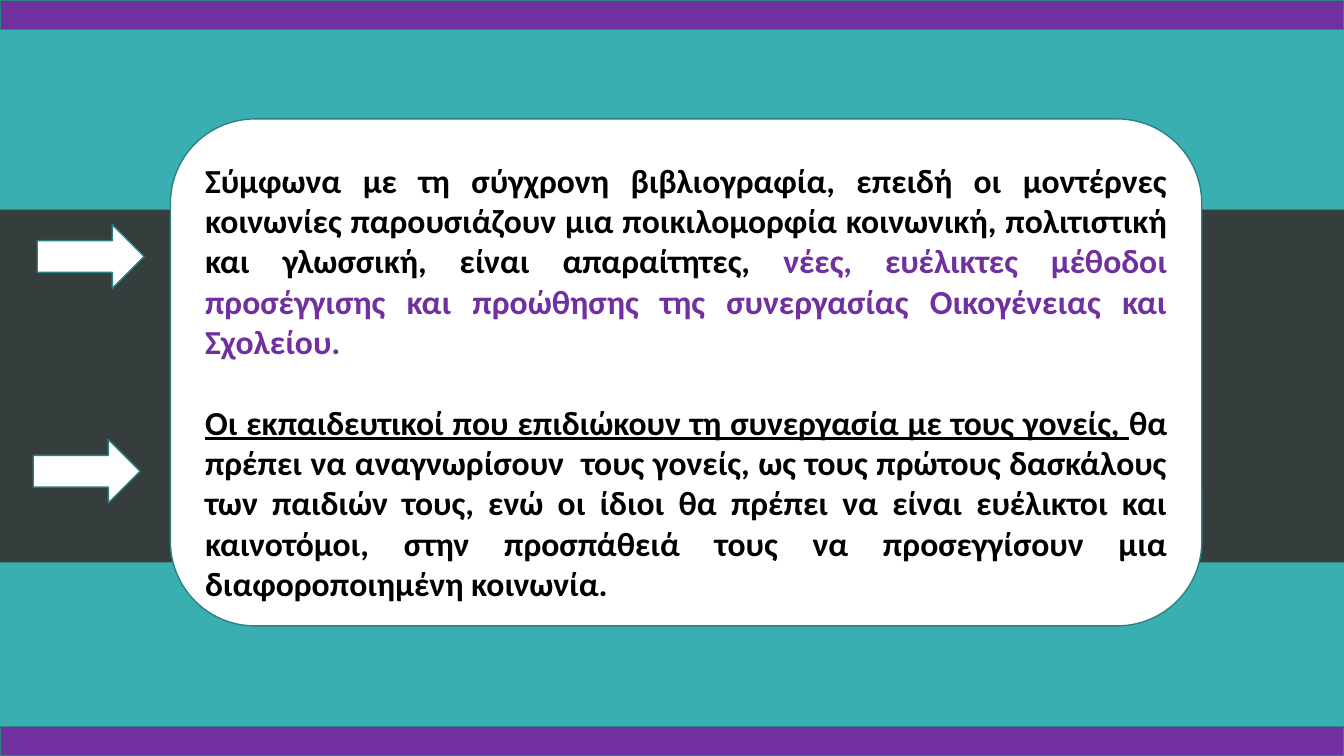
import dataclasses
import typing

import pptx
import pptx.dml.color
import pptx.enum.shapes
import pptx.enum.text
import pptx.slide
import pptx.util

Inches = pptx.util.Inches
Pt = pptx.util.Pt
MSO_SHAPE = pptx.enum.shapes.MSO_SHAPE

COLORS = {
    "dark": "363D3D",
    "teal": "3AAFB2",
    "outline": "2B8184",
    "purple": "7030A0",
    "white": "FFFFFF",
    "black": "000000",
}
SLIDE_W, SLIDE_H = 13.33, 7.5
STRIPE_H = 0.29
ARROW_W, ARROW_H = 1.06, 0.63
LINE_PITCH = 28.8


@dataclasses.dataclass
class Block:
    left: float
    top: float
    width: float
    height: float
    fill: str
    kind: MSO_SHAPE = MSO_SHAPE.RECTANGLE
    outlined: bool = True


@dataclasses.dataclass
class Phrase:
    text: str
    color: str = "black"
    underline: bool = False


BANDS = [
    Block(0, 0, SLIDE_W, 2.08, "teal", outlined=False),
    Block(0, 5.58, SLIDE_W, 1.92, "teal", outlined=False),
]
CARD = Block(1.69, 1.18, 10.23, 5.03, "white", MSO_SHAPE.ROUNDED_RECTANGLE)
ARROWS = [
    Block(left, top, ARROW_W, ARROW_H, "white", MSO_SHAPE.RIGHT_ARROW)
    for left, top in ((0.37, 2.23), (0.33, 4.36))
]
STRIPES = [
    Block(0, top, SLIDE_W, STRIPE_H, "purple") for top in (0, SLIDE_H - STRIPE_H)
]
PARAGRAPHS = [
    [
        Phrase("Σύμφωνα με τη σύγχρονη βιβλιογραφία, επειδή οι μοντέρνες κοινωνίες "
               "παρουσιάζουν μια ποικιλομορφία κοινωνική, πολιτιστική και γλωσσική, "
               "είναι απαραίτητες, "),
        Phrase("νέες, ευέλικτες μέθοδοι προσέγγισης και προώθησης της συνεργασίας "
               "Οικογένειας και Σχολείου.", color="purple"),
    ],
    [
        Phrase("Οι εκπαιδευτικοί που επιδιώκουν τη συνεργασία με τους γονείς, ",
               underline=True),
        Phrase("θα πρέπει να αναγνωρίσουν  τους γονείς, ως τους πρώτους δασκάλους "
               "των παιδιών τους, ενώ οι ίδιοι θα πρέπει να είναι ευέλικτοι και "
               "καινοτόμοι, στην προσπάθειά τους να προσεγγίσουν μια "
               "διαφοροποιημένη κοινωνία."),
    ],
]


def rgb(name: str) -> pptx.dml.color.RGBColor:
    return pptx.dml.color.RGBColor.from_string(COLORS[name])


def add_block(s: pptx.slide.Slide, block: Block) -> typing.Any:
    sp = s.shapes.add_shape(
        block.kind, Inches(block.left), Inches(block.top),
        Inches(block.width), Inches(block.height))
    sp.shadow.inherit = False
    sp.fill.solid()
    sp.fill.fore_color.rgb = rgb(block.fill)
    if block.outlined:
        sp.line.color.rgb = rgb("outline")
        sp.line.width = Pt(1)
    else:
        sp.line.fill.background()
    return sp


def write_paragraphs(sp: typing.Any, paragraphs: list[list[Phrase]]) -> None:
    tf = sp.text_frame
    tf.word_wrap = True
    tf.vertical_anchor = pptx.enum.text.MSO_ANCHOR.TOP
    tf.margin_top = Inches(0.16)
    for i, phrases in enumerate(paragraphs):
        p = tf.add_paragraph() if i else tf.paragraphs[0]
        p.alignment = pptx.enum.text.PP_ALIGN.JUSTIFY
        p.line_spacing = Pt(LINE_PITCH)
        p.space_before = Pt(LINE_PITCH if i else 0)
        for phrase in phrases:
            r = p.add_run()
            r.text = phrase.text
            r.font.name = "Calibri"
            r.font.size = Pt(24)
            r.font.bold = True
            r.font.underline = phrase.underline
            r.font.color.rgb = rgb(phrase.color)


def main() -> None:
    prs = pptx.Presentation()
    prs.slide_width, prs.slide_height = Inches(SLIDE_W), Inches(SLIDE_H)
    s = prs.slides.add_slide(prs.slide_layouts[6])
    s.background.fill.solid()
    s.background.fill.fore_color.rgb = rgb("dark")
    for band in BANDS:
        add_block(s, band)
    write_paragraphs(add_block(s, CARD), PARAGRAPHS)
    for block in ARROWS + STRIPES:
        add_block(s, block)
    prs.save("out.pptx")


if __name__ == "__main__":
    main()
